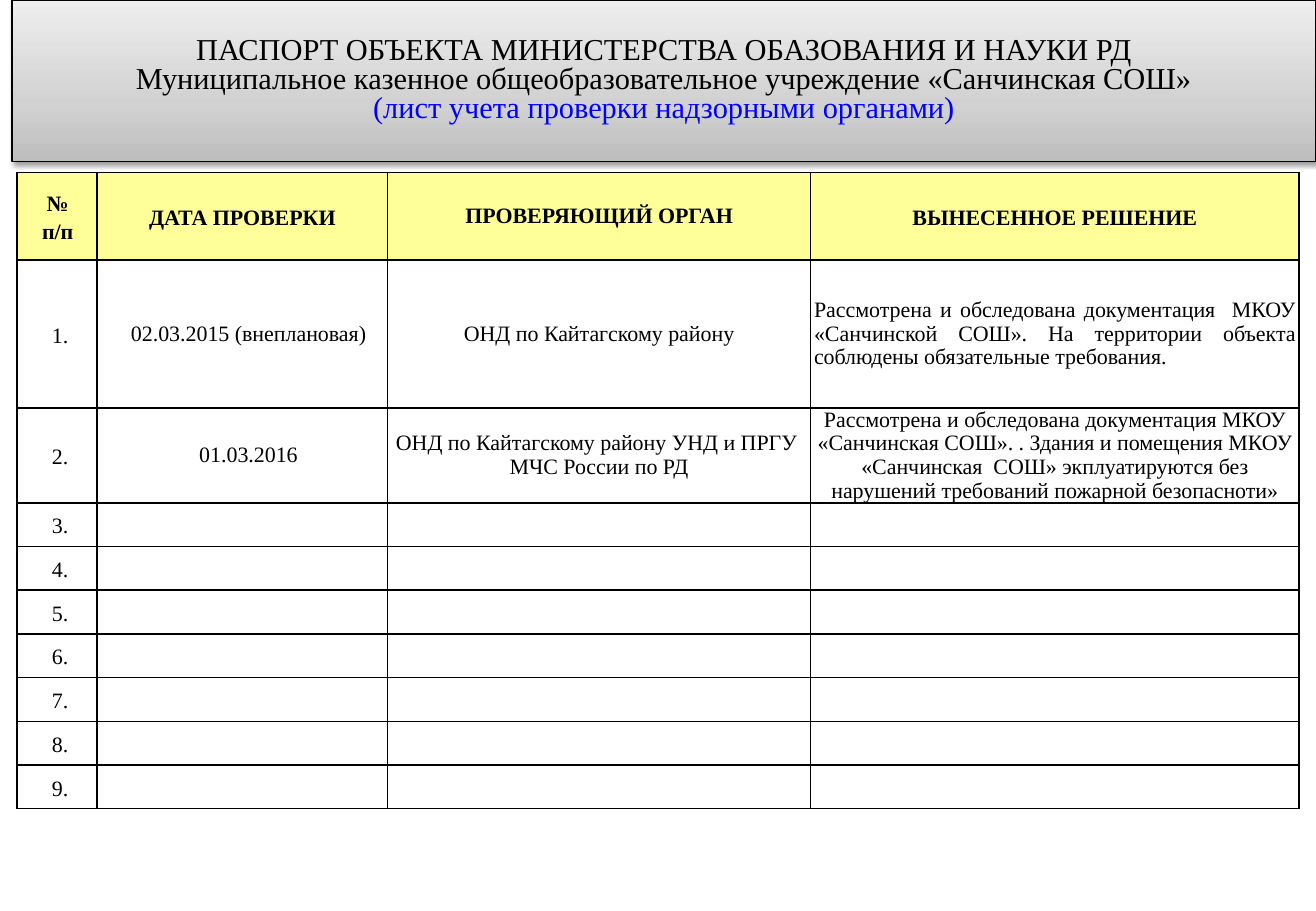
from dataclasses import dataclass

from lxml.etree import SubElement
from pptx import Presentation
from pptx.dml.color import RGBColor
from pptx.enum.shapes import MSO_SHAPE
from pptx.enum.text import MSO_ANCHOR, PP_ALIGN
from pptx.oxml import parse_xml
from pptx.oxml.ns import nsdecls, qn
from pptx.util import Emu, Inches, Pt

BLACK = RGBColor(0x00, 0x00, 0x00)
WHITE = RGBColor(0xFF, 0xFF, 0xFF)
BLUE = RGBColor(0x00, 0x00, 0xFF)
YELLOW = RGBColor(0xFF, 0xFF, 0x99)
BANNER_STOPS = (
    (0, RGBColor(0xBD, 0xBD, 0xBD)),
    (35, RGBColor(0xD1, 0xD1, 0xD1)),
    (100, RGBColor(0xEE, 0xEE, 0xEE)),
)
FONT = "Times New Roman"
SLIDE_WIDTH, SLIDE_HEIGHT = Inches(10.83), Inches(7.5)

# Percent of the slide's width and height
COLUMN_SHARES = (6.09, 22.07, 32.13, 37.12)
ROW_SHARES = (9.6, 16.27, 10.4) + (4.8,) * 7
BODY_LINE = Pt(14)


@dataclass(frozen=True)
class Entry:
    lines: tuple[str, ...] = ()
    spacing: float | Pt = BODY_LINE
    indent: float = 0
    align: PP_ALIGN = PP_ALIGN.CENTER
    bold: bool = False


def heading(*lines: str, spacing: float | Pt = 1.15, indent: float = 0) -> Entry:
    return Entry(lines, spacing, indent, bold=True)


def row_number(number: int) -> Entry:
    return Entry((f"{number}.",), 1.15, 0.05)


EMPTY = Entry()
ROWS = [
    (
        heading("№", "п/п", indent=0.01),
        heading("ДАТА ПРОВЕРКИ"),
        heading("ПРОВЕРЯЮЩИЙ ОРГАН", spacing=BODY_LINE),
        heading("ВЫНЕСЕННОЕ РЕШЕНИЕ"),
    ),
    (
        row_number(1),
        Entry(("02.03.2015 (внеплановая)",), indent=0.1),
        Entry(("ОНД по Кайтагскому району",)),
        Entry(("Рассмотрена и обследована документация  МКОУ «Санчинской СОШ». "
               "На территории объекта соблюдены обязательные требования.",),
              align=PP_ALIGN.JUSTIFY),
    ),
    (
        row_number(2),
        Entry(("01.03.2016",), indent=0.1),
        Entry(("ОНД по Кайтагскому району УНД и ПРГУ ", "МЧС России по РД"), Pt(13.8)),
        Entry(("Рассмотрена и обследована документация МКОУ «Санчинская СОШ». . "
               "Здания и помещения МКОУ «Санчинская  СОШ» экплуатируются без "
               "нарушений требований пожарной безопасноти»",)),
    ),
] + [(row_number(number), EMPTY, EMPTY, EMPTY) for number in range(3, 10)]


def across(percent: float) -> Emu:
    return Emu(round(SLIDE_WIDTH * percent / 100))


def down(percent: float) -> Emu:
    return Emu(round(SLIDE_HEIGHT * percent / 100))


def write_line(frame, index: int, text: str, *, size: float, spacing: float | Pt,
               align: PP_ALIGN = PP_ALIGN.CENTER, color: RGBColor = BLACK,
               bold: bool = False, indent: float = 0) -> None:
    para = frame.add_paragraph() if index else frame.paragraphs[0]
    para.alignment, para.line_spacing = align, spacing
    if indent:
        properties = para._p.get_or_add_pPr()
        properties.set("marL", str(Inches(indent)))
        properties.set("indent", "0")
    span = para.add_run()
    span.text = text
    span.font.name, span.font.size, span.font.bold = FONT, Pt(size), bold
    span.font.color.rgb = color


def add_borders(cell) -> None:
    properties = cell._tc.get_or_add_tcPr()
    for position, side in enumerate(("lnL", "lnR", "lnT", "lnB")):
        properties.insert(position, parse_xml(
            f'<a:{side} {nsdecls("a")} w="{Pt(1)}"><a:solidFill>'
            f'<a:srgbClr val="{BLACK}"/></a:solidFill></a:{side}>'))


def fill_cell(cell, entry: Entry, color: RGBColor) -> None:
    cell.fill.solid()
    cell.fill.fore_color.rgb = color
    add_borders(cell)
    cell.vertical_anchor = MSO_ANCHOR.MIDDLE
    cell.margin_left = cell.margin_right = Inches(0.03)
    cell.margin_top = cell.margin_bottom = 0
    for index, line in enumerate(entry.lines):
        write_line(cell.text_frame, index, line, size=13, spacing=entry.spacing,
                   align=entry.align, bold=entry.bold, indent=entry.indent)


def add_inspections(page) -> None:
    table = page.shapes.add_table(
        len(ROWS), len(COLUMN_SHARES), across(1.29), down(18.93),
        across(sum(COLUMN_SHARES)), down(sum(ROW_SHARES))).table
    table.first_row = table.horz_banding = False
    for column, share in zip(table.columns, COLUMN_SHARES):
        column.width = across(share)
    for index, (row, share, entries) in enumerate(zip(table.rows, ROW_SHARES, ROWS)):
        row.height = down(share)
        for cell, entry in zip(row.cells, entries):
            fill_cell(cell, entry, WHITE if index else YELLOW)


def shade_banner(box) -> None:
    """Give the banner its three-stop gradient and soft shadow."""
    box.fill.gradient()
    box.fill.gradient_angle = 90
    stops = box._element.spPr.find(qn("a:gradFill")).find(qn("a:gsLst"))
    for stop in list(stops):
        stops.remove(stop)
    for percent, color in BANNER_STOPS:
        stop = SubElement(stops, qn("a:gs"), pos=str(percent * 1000))
        SubElement(stop, qn("a:srgbClr"), val=str(color))
    box.shadow.inherit = False
    box._element.spPr.find(qn("a:effectLst")).append(parse_xml(
        f'<a:outerShdw {nsdecls("a")} blurRad="{Pt(3.1)}" dist="{Pt(1.6)}" '
        f'dir="5400000" rotWithShape="0"><a:srgbClr val="{BLACK}">'
        '<a:alpha val="38000"/></a:srgbClr></a:outerShdw>'))


def add_banner(page) -> None:
    box = page.shapes.add_shape(MSO_SHAPE.RECTANGLE, across(0.92), 0,
                                across(99.08), down(17.73))
    box.line.color.rgb, box.line.width = BLACK, Pt(0.75)
    shade_banner(box)
    frame = box.text_frame
    frame.word_wrap, frame.vertical_anchor = True, MSO_ANCHOR.MIDDLE
    lines = (
        ("ПАСПОРТ ОБЪЕКТА МИНИСТЕРСТВА ОБАЗОВАНИЯ И НАУКИ РД", BLACK),
        ("Муниципальное казенное общеобразовательное учреждение «Санчинская СОШ»", BLACK),
        ("(лист учета проверки надзорными органами)", BLUE),
    )
    for index, (text, color) in enumerate(lines):
        write_line(frame, index, text, size=18, spacing=0.8, color=color)


def main() -> None:
    deck = Presentation()
    deck.slide_width, deck.slide_height = SLIDE_WIDTH, SLIDE_HEIGHT
    page = deck.slides.add_slide(deck.slide_layouts[6])
    add_inspections(page)
    add_banner(page)
    deck.save("out.pptx")


if __name__ == "__main__":
    main()
